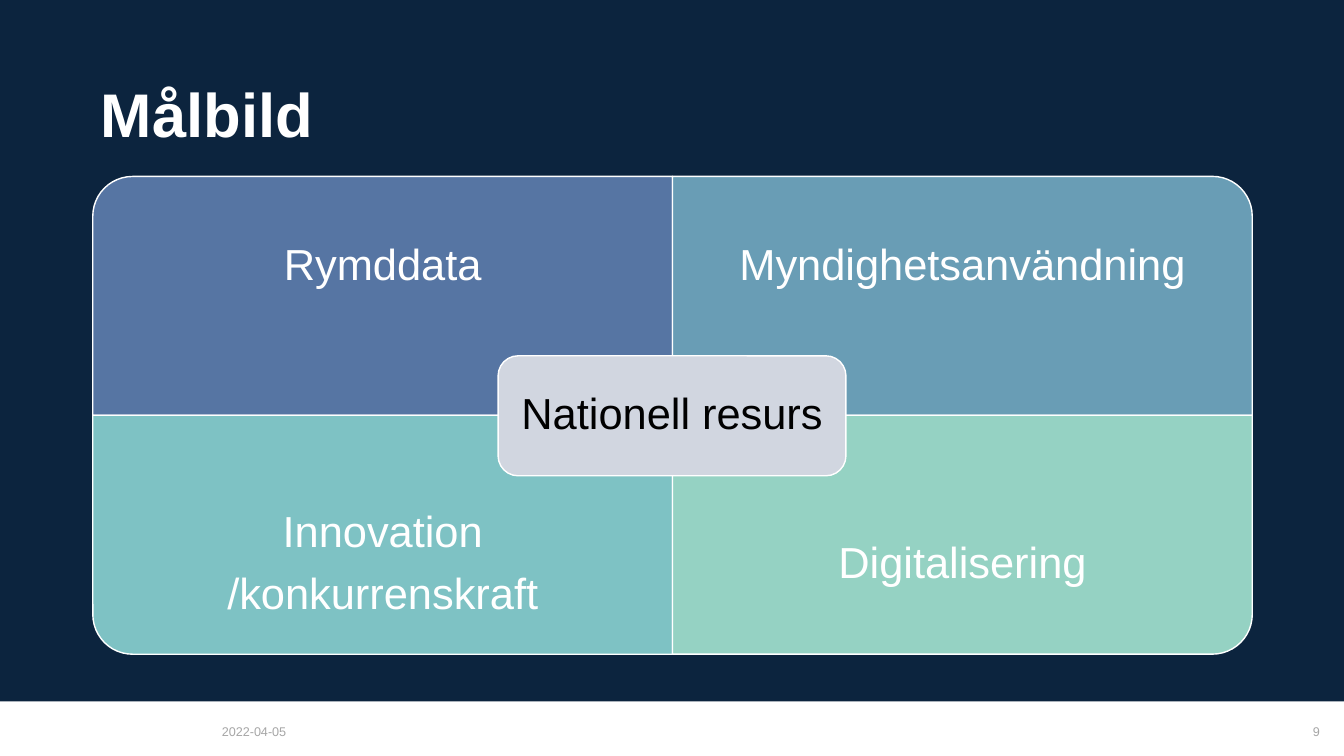
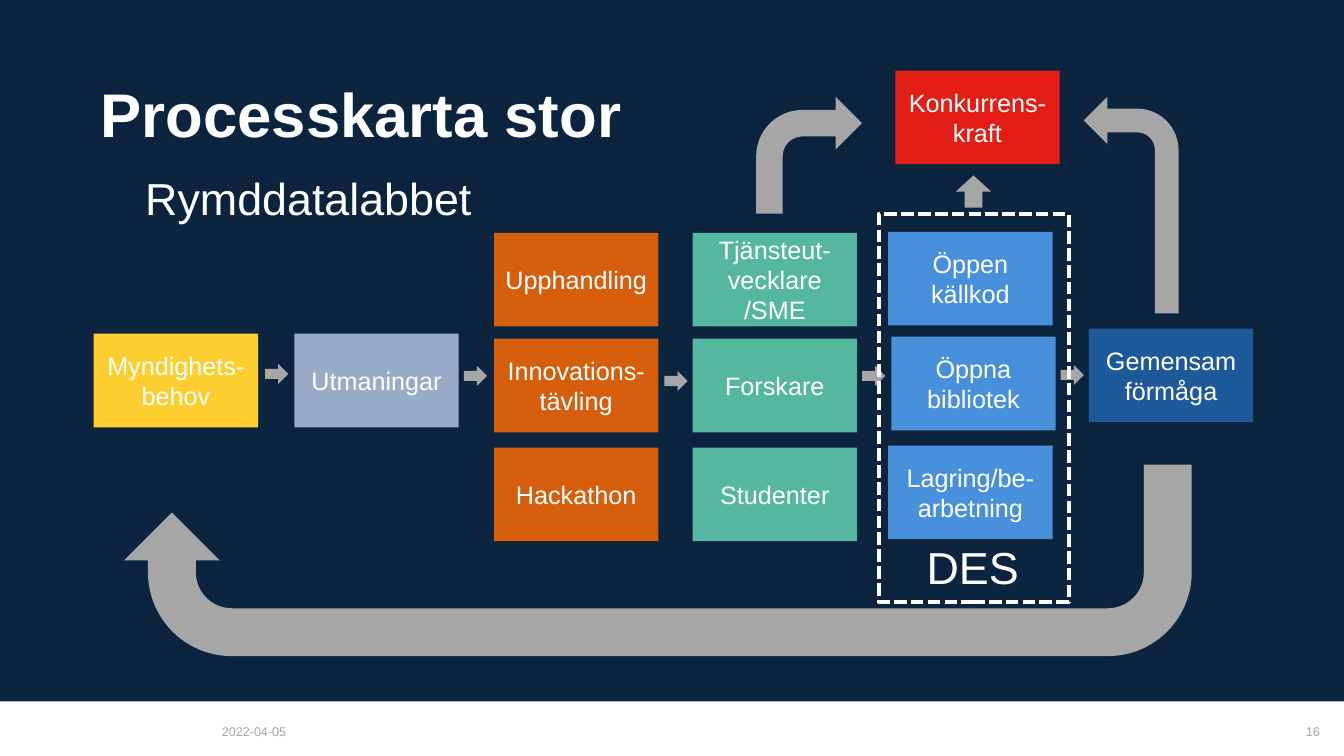
from pptx import Presentation
from pptx.dml.color import RGBColor
from pptx.enum.dml import MSO_LINE
from pptx.enum.shapes import MSO_SHAPE as SHAPE
from pptx.enum.text import MSO_ANCHOR as ANCHOR, MSO_AUTO_SIZE as AUTO, PP_ALIGN as ALIGN
from pptx.oxml.ns import qn
from pptx.util import Inches, Pt

FONT = "Arial"
NAVY, WHITE, BLACK, GREY = "0C243E", "FFFFFF", "000000", "A6A6A6"
ORANGE, GREEN, BLUE = "D55F0D", "56B79F", "488FDC"
DATE = "2022-04-05"
BOX_W, BOX_H = 1.63, 0.93

QUADRANTS = [
    ("5675A3", 270, ["Rymddata"]),
    ("699DB5", 0, ["Myndighetsanvändning"]),
    ("7EC2C4", 180, ["Innovation", "/konkurrenskraft"]),
    ("95D2C3", 90, ["Digitalisering"]),
]
BOXES = [
    (0.93, 3.31, "FCCE30", "Myndighets-behov"),
    (2.92, 3.31, "98ACC9", "Utmaningar"),
    (4.9, 2.31, ORANGE, "Upphandling"),
    (4.9, 3.36, ORANGE, "Innovations-tävling"),
    (4.9, 4.44, ORANGE, "Hackathon"),
    (6.87, 2.31, GREEN, "Tjänsteut-vecklare /SME"),
    (6.87, 3.36, GREEN, "Forskare"),
    (6.87, 4.44, GREEN, "Studenter"),
    (8.81, 2.3, BLUE, "Öppen källkod"),
    (8.84, 3.34, BLUE, "Öppna bibliotek"),
    (8.81, 4.42, BLUE, "Lagring/be-arbetning"),
    (10.8, 3.26, "1E5999", "Gemensam förmåga"),
    (8.88, 0.7, "E21E16", "Konkurrens-kraft"),
]
STEP_ARROWS = [(2.63, 3.61), (4.6, 3.63), (6.59, 3.68), (8.55, 3.63), (10.52, 3.62)]


def rgb(value):
    """Turn a hex string into a colour."""
    return RGBColor.from_string(value)


def write(s, lines, size, color=WHITE, align=ALIGN.LEFT, anchor=ANCHOR.TOP,
          inset=(0.08, 0.08), wrap=True, bold=False, spacing=None, gap=0):
    """Fill a shape with formatted paragraphs."""
    tf = s.text_frame
    tf.auto_size, tf.word_wrap, tf.vertical_anchor = AUTO.NONE, wrap, anchor
    tf.margin_left = tf.margin_right = Inches(inset[0])
    tf.margin_top = tf.margin_bottom = Inches(inset[1])
    tf.text = "\n".join(lines)
    for p in tf.paragraphs:
        p.alignment, p.line_spacing, p.space_after = align, spacing, Pt(gap)
        p.font.name, p.font.size, p.font.bold = FONT, Pt(size), bold
        p.font.color.rgb = rgb(color)


def add_text(slide, at, lines, size, **style):
    """Add a text box."""
    s = slide.shapes.add_textbox(*map(Inches, at))
    write(s, lines, size, **style)
    return s


def add_shape(slide, kind, at, fill=None, line=None, width=1, rotation=0, flips=()):
    """Add a flat preset shape."""
    s = slide.shapes.add_shape(kind, *map(Inches, at))
    s.shadow.inherit = False
    s.rotation = rotation
    if fill:
        s.fill.solid()
        s.fill.fore_color.rgb = rgb(fill)
    else:
        s.fill.background()
    if line:
        s.line.color.rgb = rgb(line)
        s.line.width = Pt(width)
    else:
        s.line.fill.background()
    for flip in flips:
        s.element.spPr.find(qn("a:xfrm")).set(flip, "1")
    return s


def move_band_to_layout(slide):
    """Give the slide's layout the dark band."""
    s = add_shape(slide, SHAPE.RECTANGLE, (0, 0, 13.33, 6.96), NAVY)
    s.element.nvSpPr.cNvPr.set("id", "99")
    slide.slide_layout.shapes.element.insert(2, s.element)


def add_slide(prs, title, number, title_width=11.5):
    """Add a slide with its title and footer."""
    slide = prs.slides.add_slide(prs.slide_layouts[5])
    s = slide.shapes.title
    s.left, s.top, s.width, s.height = map(Inches, (0.92, 0.48, title_width, 1.37))
    write(s, [title], 44, anchor=ANCHOR.MIDDLE, bold=True, spacing=0.9)
    footer = dict(color=GREY, anchor=ANCHOR.BOTTOM, inset=(0, 0.05))
    add_text(slide, (2.2, 7.15, 0.8, 0.23), [DATE], 9, **footer)
    add_text(slide, (10.6, 7.15, 2.49, 0.23), [number], 9, align=ALIGN.RIGHT, **footer)
    return slide


def add_matrix(slide):
    """Draw the four quadrants around the central label."""
    left, top, w, h, text_h = 0.92, 1.75, 5.75, 2.37, 1.78
    label = dict(align=ALIGN.CENTER, anchor=ANCHOR.MIDDLE, spacing=0.9, gap=11)
    for i, (fill, rotation, lines) in enumerate(QUADRANTS):
        row, col = divmod(i, 2)
        x, y = left + col * w, top + row * h
        at = (x, y, w, h)
        if rotation % 180:
            at = (x + (w - h) / 2, y + (h - w) / 2, h, w)
        add_shape(slide, SHAPE.ROUND_1_RECTANGLE, at, fill, WHITE, rotation=rotation)
        text_y = y + row * (h - text_h)
        add_text(slide, (x, text_y, w, text_h), lines, 31, inset=(0.24, 0.24), **label)
    s = add_shape(slide, SHAPE.ROUNDED_RECTANGLE, (4.94, 3.53, 3.45, 1.19), "D1D6E0", WHITE)
    write(s, ["Nationell resurs"], 31, color=BLACK, inset=(0.13, 0.13), **label)


def add_process(slide):
    """Draw the process boxes, arrows and dashed frame."""
    for x, y, fill, text in BOXES:
        s = add_shape(slide, SHAPE.RECTANGLE, (x, y, BOX_W, BOX_H), fill)
        write(s, [text], 18, align=ALIGN.CENTER, anchor=ANCHOR.MIDDLE, inset=(0.1, 0.05))
    for x, y in STEP_ARROWS:
        add_shape(slide, SHAPE.RIGHT_ARROW, (x, y, 0.23, 0.2), GREY)
    add_shape(slide, SHAPE.UP_ARROW, (9.48, 1.74, 0.35, 0.32), GREY)
    add_shape(slide, SHAPE.BENT_ARROW, (7.5, 0.96, 1.05, 1.16), GREY)
    add_shape(slide, SHAPE.BENT_ARROW, (10.75, 0.96, 0.94, 2.15), GREY, flips=["flipH"])
    add_shape(slide, SHAPE.U_TURN_ARROW, (1.23, 4.61, 10.59, 1.9), GREY,
              flips=["flipH", "flipV"])
    frame = add_shape(slide, SHAPE.RECTANGLE, (8.72, 2.12, 1.88, 3.85), line=WHITE, width=3)
    frame.line.dash_style = MSO_LINE.SQUARE_DOT
    add_text(slide, (1.36, 1.61, 3.42, 0.7), ["Rymddatalabbet"], 32, wrap=False)
    add_text(slide, (9.11, 5.27, 1.08, 0.7), ["DES"], 32, wrap=False)


def main():
    """Build and save the presentation."""
    prs = Presentation()
    prs.slide_width, prs.slide_height = Inches(13.33), Inches(7.5)
    slide = add_slide(prs, "Målbild", "9")
    move_band_to_layout(slide)
    add_matrix(slide)
    add_process(add_slide(prs, "Processkarta stor", "16", 6.54))
    prs.save("out.pptx")


if __name__ == "__main__":
    main()
